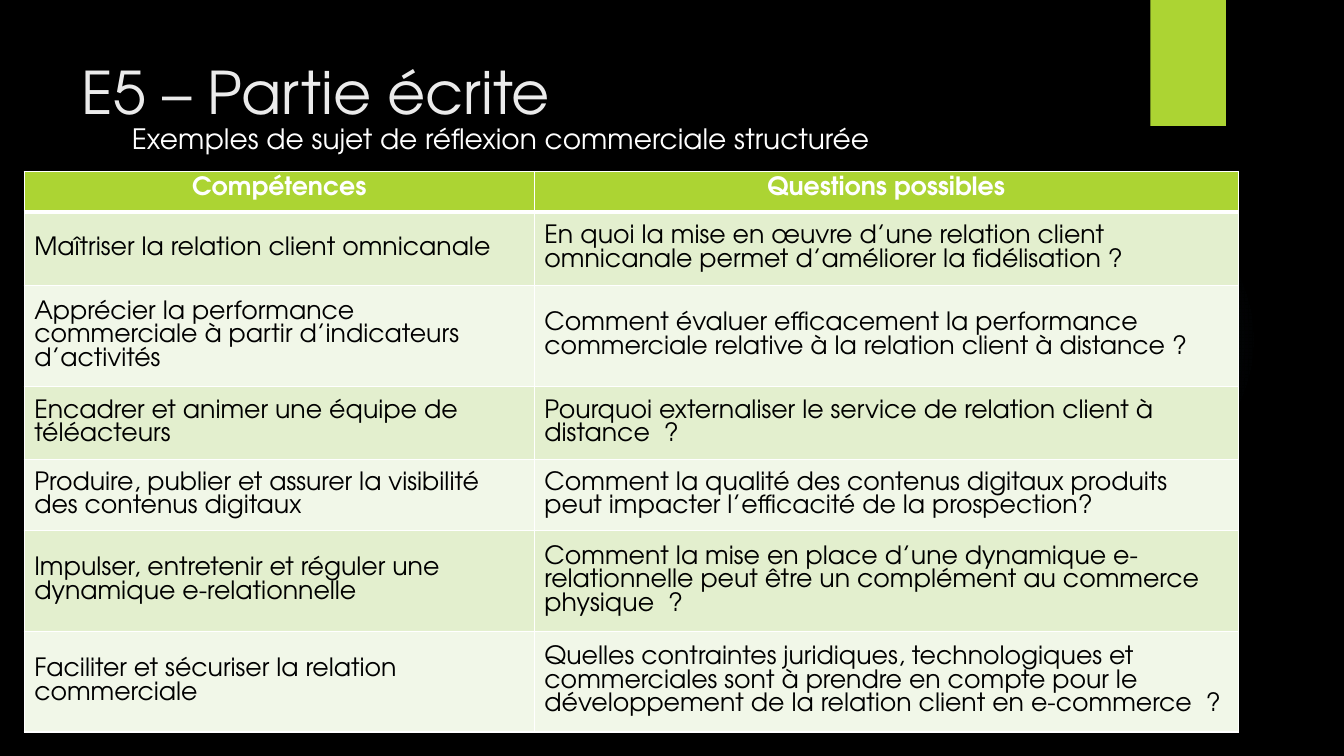
from lxml import etree
from pptx import Presentation
from pptx.dml.color import RGBColor
from pptx.enum.shapes import MSO_SHAPE
from pptx.enum.text import MSO_ANCHOR, PP_ALIGN
from pptx.oxml import parse_xml
from pptx.oxml.ns import nsdecls, qn
from pptx.util import Inches, Pt

FONT = "TeX Gyre Adventor"
TOP, MIDDLE = MSO_ANCHOR.TOP, MSO_ANCHOR.MIDDLE
LEFT, CENTER = PP_ALIGN.LEFT, PP_ALIGN.CENTER
LIME, WHITE, BLACK = "ACD433", "FFFFFF", "000000"
BANDS = ["F1F7E8", "E3EFCE"]
COLS = [5.06, 6.98]
ROWS = [
    (0.37, "Compétences", "Questions possibles"),
    (0.73, "Maîtriser la relation client omnicanale",
     "En quoi la mise en œuvre d’une relation client omnicanale permet "
     "d’améliorer la fidélisation ?"),
    (0.97, "Apprécier la performance commerciale à partir d’indicateurs d’activités",
     "Comment évaluer efficacement la performance commerciale relative à la "
     "relation client à distance ?"),
    (0.73, "Encadrer et animer une équipe de téléacteurs",
     "Pourquoi externaliser le service de relation client à distance  ?"),
    (0.7, "Produire, publier et assurer la visibilité des contenus digitaux",
     "Comment la qualité des contenus digitaux produits peut impacter "
     "l’efficacité de la prospection?"),
    (0.96, "Impulser, entretenir et réguler une dynamique e-relationnelle",
     "Comment la mise en place d’une dynamique e-relationnelle peut être un "
     "complément au commerce physique  ?"),
    (0.52, "Faciliter et sécuriser la relation commerciale",
     "Quelles contraintes juridiques, technologiques et commerciales sont à "
     "prendre en compte pour le développement de la relation client en "
     "e-commerce  ?"),
]


def rgb(code):
    return RGBColor.from_string(code)


def write(frame, text, size, color, align=LEFT, bold=False):
    frame.word_wrap = True
    para = frame.paragraphs[0]
    para.alignment = align
    run = para.add_run()
    run.text = text
    run.font.name, run.font.size, run.font.bold = FONT, Pt(size), bold
    run.font.color.rgb = rgb(color)


deck = Presentation()
deck.slide_width, deck.slide_height = Inches(13.33), Inches(7.5)
slide = deck.slides.add_slide(deck.slide_layouts[5])
slide.background.fill.solid()
slide.background.fill.fore_color.rgb = rgb(BLACK)

# Soft glow and lime tab
glow = slide.shapes.add_shape(MSO_SHAPE.OVAL, Inches(9.41), Inches(1.83),
                              Inches(3.08), Inches(3.08))
tab = slide.shapes.add_shape(MSO_SHAPE.RECTANGLE, Inches(11.41), 0,
                             Inches(0.75), Inches(1.25))
for shape in (glow, tab):
    shape.shadow.inherit = False
    shape.line.fill.background()
tab.fill.solid()
tab.fill.fore_color.rgb = rgb(LIME)
stops = "".join(
    f'<a:gs pos="{pos}000"><a:srgbClr val="7AC4F0"><a:alpha val="{alpha}000"/>'
    "</a:srgbClr></a:gs>" for pos, alpha in ((0, 7), (36, 6), (69, 0), (100, 0)))
glow._element.spPr.find(qn("a:prstGeom")).addnext(parse_xml(
    f'<a:gradFill {nsdecls("a")}><a:gsLst>{stops}</a:gsLst><a:path path="circle">'
    '<a:fillToRect l="50000" t="50000" r="50000" b="50000"/></a:path></a:gradFill>'))

# Title and subtitle
title = slide.shapes.title
title.left, title.top = Inches(0.71), Inches(0.5)
title.width, title.height = Inches(10.29), Inches(1.53)
title.text_frame.vertical_anchor = TOP
write(title.text_frame, "E5 – Partie écrite", 42, "EBEBEB")
sub = slide.shapes.add_textbox(Inches(1.21), Inches(1.16), Inches(9.78), Inches(0.5))
write(sub.text_frame, "Exemples de sujet de réflexion commerciale structurée", 20, WHITE)

# Table of skills and questions
grid = slide.shapes.add_table(len(ROWS), len(COLS), Inches(0.24), Inches(1.7),
                              Inches(sum(COLS)), Inches(5)).table
for col, width in zip(grid.columns, COLS):
    col.width = Inches(width)
for r, (height, *texts) in enumerate(ROWS):
    grid.rows[r].height = Inches(height)
    head = r == 0
    for c, text in enumerate(texts):
        cell = grid.cell(r, c)
        cell.vertical_anchor = TOP if head else MIDDLE
        write(cell.text_frame, text, 18, WHITE if head else BLACK,
              CENTER if head else LEFT, head)
        # White borders, thicker under the header
        props = cell._tc.get_or_add_tcPr()
        for side in "LRTB":
            thick = (head and side == "B") or (r == 1 and side == "T")
            edge = etree.SubElement(props, qn(f"a:ln{side}"), w=str(Pt(3 if thick else 1)))
            paint = etree.SubElement(edge, qn("a:solidFill"))
            etree.SubElement(paint, qn("a:srgbClr"), val=WHITE)
        cell.fill.solid()
        cell.fill.fore_color.rgb = rgb(LIME if head else BANDS[r % 2])

deck.save("out.pptx")
